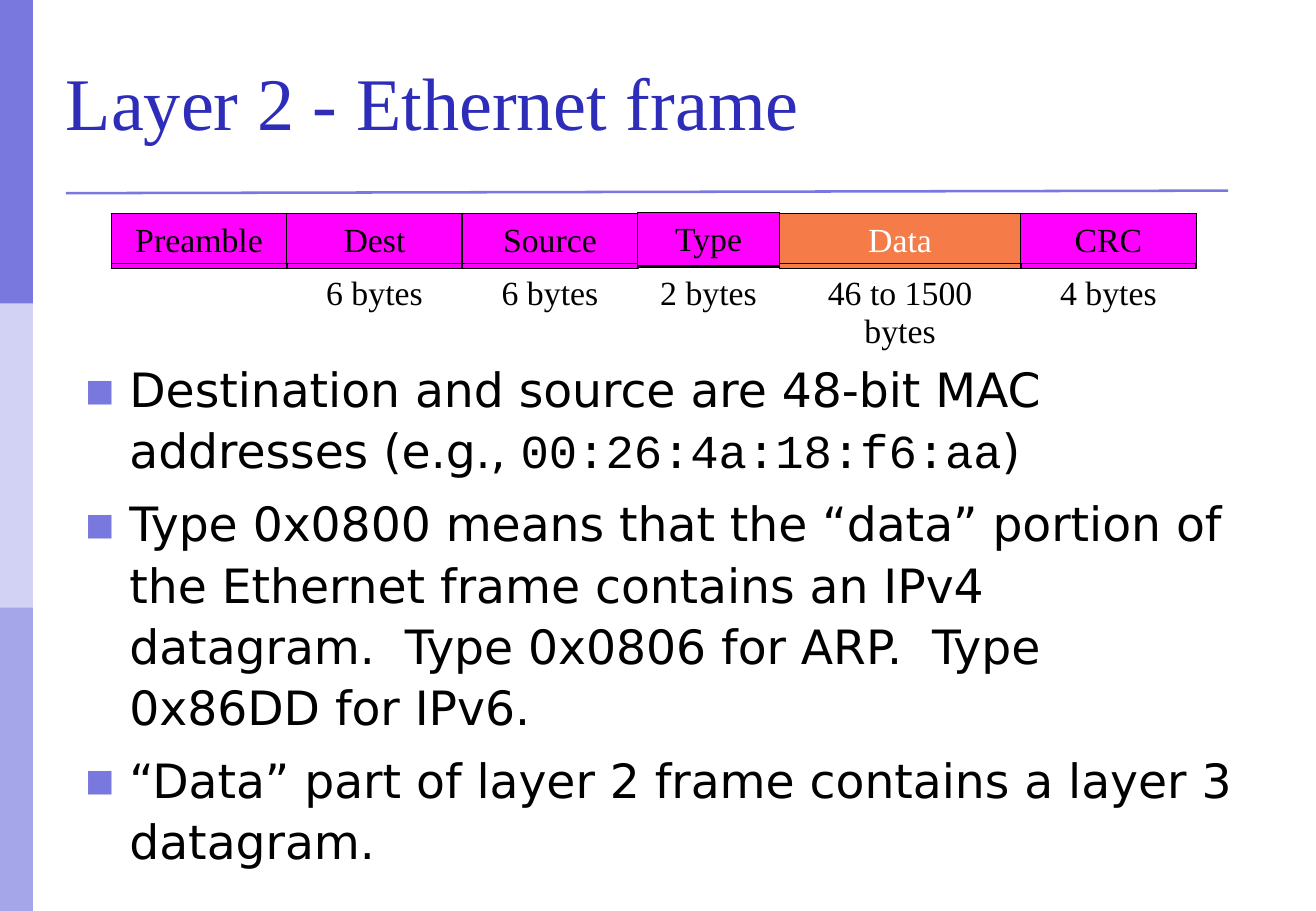
from dataclasses import dataclass

from lxml.etree import SubElement
from pptx import Presentation
from pptx.dml.color import RGBColor
from pptx.enum.shapes import MSO_CONNECTOR, MSO_SHAPE
from pptx.enum.text import MSO_ANCHOR, MSO_AUTO_SIZE, PP_ALIGN
from pptx.oxml.ns import qn
from pptx.util import Pt

BLACK = RGBColor(0x00, 0x00, 0x00)
WHITE = RGBColor(0xFF, 0xFF, 0xFF)
TITLE_BLUE = RGBColor(0x2D, 0x2D, 0xB9)
PERIWINKLE = RGBColor(0x78, 0x78, 0xDE)
PALE_LILAC = RGBColor(0xD2, 0xD2, 0xF4)
LILAC = RGBColor(0xA5, 0xA5, 0xE9)
MAGENTA = RGBColor(0xFF, 0x00, 0xFF)
ORANGE = RGBColor(0xF5, 0x7B, 0x49)

SERIF = "Times New Roman"
SANS = "DejaVu Sans"
MONO = "Courier New"

FRAME_LEFT = 66
SIZE_TOP = 158.4


@dataclass
class Field:
    name: str
    size: str
    width: float = 104
    fill: RGBColor = MAGENTA
    color: RGBColor = BLACK
    top: float = 126.7
    name_height: float = 29.5
    size_height: float = 29.5


FIELDS = [
    Field("Preamble", ""),
    Field("Dest", "6 bytes"),
    Field("Source", "6 bytes"),
    Field("Type", "2 bytes", width=84, top=126, name_height=31.7),
    Field("Data", "46 to 1500 bytes", width=143, fill=ORANGE, color=WHITE,
          size_height=51.8),
    Field("CRC", "4 bytes"),
]

# Each bullet is a list of (text, font) pieces.
BULLETS = [
    [("Destination and source are 48-bit MAC addresses (e.g., ", SANS),
     ("00:26:4a:18:f6:aa", MONO), (")", SANS)],
    [("Type 0x0800 means that the “data” portion of the Ethernet frame "
      "contains an IPv4 datagram.  Type 0x0806 for ARP.  "
      "Type 0x86DD for IPv6.", SANS)],
    [("“Data” part of layer 2 frame contains a layer 3 datagram.", SANS)],
]


def place(placeholder, left, top, width, height):
    placeholder.left, placeholder.top = Pt(left), Pt(top)
    placeholder.width, placeholder.height = Pt(width), Pt(height)


def set_up_frame(frame, anchor, left, top, right, bottom):
    """Set wrapping, anchor and insets of a text frame."""
    frame.word_wrap = True
    frame.auto_size = MSO_AUTO_SIZE.NONE
    frame.vertical_anchor = anchor
    frame.margin_left, frame.margin_top = Pt(left), Pt(top)
    frame.margin_right, frame.margin_bottom = Pt(right), Pt(bottom)


def style_font(font, name, size, color):
    font.name, font.size = name, Pt(size)
    font.color.rgb = color


def add_block(slide, kind, left, top, width, height, fill, line_width=None):
    block = slide.shapes.add_shape(kind, Pt(left), Pt(top), Pt(width), Pt(height))
    block.shadow.inherit = False
    block.fill.solid()
    block.fill.fore_color.rgb = fill
    if line_width:
        block.line.color.rgb = BLACK
        block.line.width = Pt(line_width)
    else:
        block.line.fill.background()
    return block


def write_label(frame, text, color):
    set_up_frame(frame, MSO_ANCHOR.TOP, 7.2, 5, 7.2, 3.6)
    label = frame.paragraphs[0]
    label.text = text
    label.alignment = PP_ALIGN.CENTER
    label.line_spacing = 0.93
    style_font(label.font, SERIF, 20, color)


def add_sidebar(slide):
    for row, color in enumerate((PERIWINKLE, PALE_LILAC, LILAC)):
        add_block(slide, MSO_SHAPE.RECTANGLE, 0, row * 180, 19.5, 180, color)


def add_divider(slide):
    divider = slide.shapes.add_connector(
        MSO_CONNECTOR.STRAIGHT, Pt(39), Pt(114.5), Pt(728), Pt(113))
    divider.line.color.rgb = PERIWINKLE
    divider.line.width = Pt(1.5)
    SubElement(divider._element.spPr, qn("a:effectLst"))


def write_title(title):
    place(title, 39, 19.5, 701, 91.5)
    set_up_frame(title.text_frame, MSO_ANCHOR.MIDDLE, 0, 0, 0, 0)
    heading = title.text_frame.paragraphs[0]
    heading.text = "Layer 2 - Ethernet frame"
    heading.alignment = PP_ALIGN.LEFT
    heading.line_spacing = 0.78
    style_font(heading.font, SERIF, 44, TITLE_BLUE)


def set_bullet(paragraph):
    properties = paragraph._p.get_or_add_pPr()
    properties.set("marL", str(Pt(27)))
    properties.set("indent", str(-Pt(27)))
    bullet_color = SubElement(properties, qn("a:buClr"))
    SubElement(bullet_color, qn("a:srgbClr")).set("val", str(PERIWINKLE))
    SubElement(properties, qn("a:buFont")).set("typeface", SANS)
    SubElement(properties, qn("a:buChar")).set("char", "▪")


def write_bullets(body):
    place(body, 42.5, 207.4, 701, 356.4)
    frame = body.text_frame
    set_up_frame(frame, MSO_ANCHOR.TOP, 7.2, 3.6, 7.2, 3.6)
    for index, pieces in enumerate(BULLETS):
        bullet = frame.add_paragraph() if index else frame.paragraphs[0]
        bullet.line_spacing = 1.08
        bullet.space_before = Pt(7)
        set_bullet(bullet)
        style_font(bullet.font, SANS, 28, BLACK)
        for text, font_name in pieces:
            run = bullet.add_run()
            run.text = text
            run.font.name = font_name


def add_field(slide, field, left):
    """Draw one frame field with its name inside and its size below."""
    backing = add_block(slide, MSO_SHAPE.ROUNDED_RECTANGLE, left, field.top,
                        field.width, 32.4, field.fill, 1)
    backing.adjustments[0] = 0
    name_box = add_block(slide, MSO_SHAPE.RECTANGLE, left, field.top,
                         field.width, field.name_height, field.fill, 0.75)
    write_label(name_box.text_frame, field.name, field.color)
    if field.size:
        size_box = slide.shapes.add_textbox(
            Pt(left), Pt(SIZE_TOP), Pt(field.width), Pt(field.size_height))
        write_label(size_box.text_frame, field.size, BLACK)


def main():
    deck = Presentation()
    deck.slide_width, deck.slide_height = Pt(780), Pt(540)
    slide = deck.slides.add_slide(deck.slide_layouts[1])
    add_sidebar(slide)
    add_divider(slide)
    write_title(slide.shapes.title)
    write_bullets(slide.placeholders[1])
    left = FRAME_LEFT
    for field in FIELDS:
        add_field(slide, field, left)
        left += field.width
    deck.save("out.pptx")


if __name__ == "__main__":
    main()
